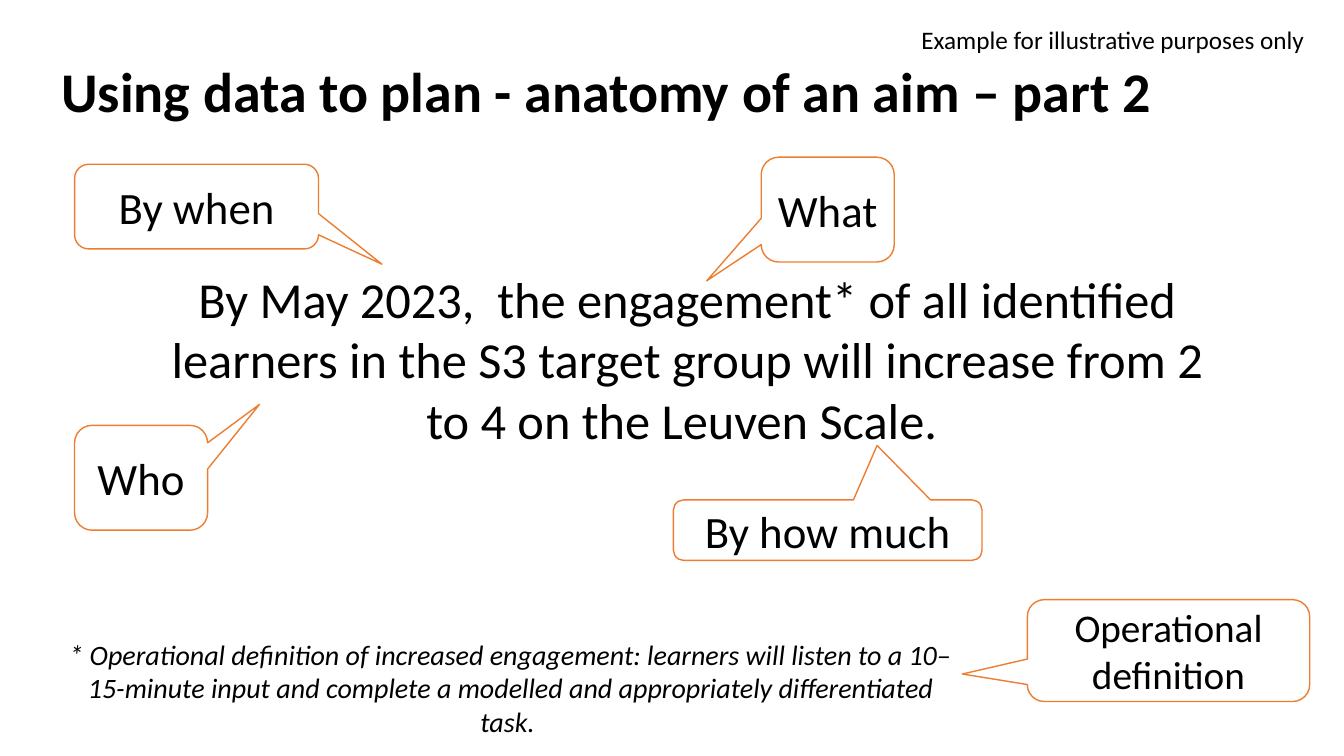
from pptx import Presentation
from pptx.dml.color import RGBColor
from pptx.enum.shapes import MSO_SHAPE
from pptx.enum.text import MSO_ANCHOR, PP_ALIGN
from pptx.util import Inches, Pt

CALLOUT = MSO_SHAPE.ROUNDED_RECTANGULAR_CALLOUT
TOP, MIDDLE = MSO_ANCHOR.TOP, MSO_ANCHOR.MIDDLE
LEFT, CENTER = PP_ALIGN.LEFT, PP_ALIGN.CENTER


def rgb(value):
    return RGBColor.from_string(value)


def write(tf, text, size, align=CENTER, anchor=TOP, bold=False, italic=False,
          wrap=True, spacing=None, font="Calibri", color="000000"):
    tf.word_wrap = wrap
    tf.vertical_anchor = anchor
    p = tf.paragraphs[0]
    p.alignment = align
    p.line_spacing = spacing
    r = p.add_run()
    r.text = text
    r.font.name = font
    r.font.size = Pt(size)
    r.font.bold = bold
    r.font.italic = italic
    r.font.color.rgb = rgb(color)


class AimSlide:
    """Draws on one slide, with boxes given as percent of its width and height."""

    fill = "FFFFFF"
    accent = "ED7D31"

    def __init__(self, prs):
        self.width, self.height = prs.slide_width, prs.slide_height
        self.s = prs.slides.add_slide(prs.slide_layouts[6])

    def place(self, x, y, w, h):
        return (round(self.width * x / 100), round(self.height * y / 100),
                round(self.width * w / 100), round(self.height * h / 100))

    def text(self, box, text, size, **style):
        sp = self.s.shapes.add_textbox(*self.place(*box))
        write(sp.text_frame, text, size, **style)

    def callout(self, box, tip, text, size=32):
        sp = self.s.shapes.add_shape(CALLOUT, *self.place(*box))
        sp.shadow.inherit = False
        sp.adjustments[0], sp.adjustments[1] = tip
        sp.fill.solid()
        sp.fill.fore_color.rgb = rgb(self.fill)
        sp.line.color.rgb = rgb(self.accent)
        sp.line.width = Pt(1)
        write(sp.text_frame, text, size, anchor=MIDDLE)


def main():
    prs = Presentation()
    prs.slide_width, prs.slide_height = Inches(13.33), Inches(7.5)
    slide = AimSlide(prs)

    slide.text((3.83, 83.6, 68.34, 14.8),
               "* Operational definition of increased engagement: learners will "
               "listen to a 10–15-minute input and complete a modelled and "
               "appropriately differentiated task. ", 20, italic=True)

    slide.callout((5.55, 21.73, 18.15, 11.2), (0.76, 0.68), "By when")
    slide.callout((5.55, 56.27, 9.9, 13.87), (0.89, -0.7), "Who")
    slide.callout((56.64, 20.8, 9.9, 13.87), (-0.91, 0.68), "What")
    slide.callout((50.11, 66.13, 22.96, 8), (0.16, -1.4), "By how much")
    slide.callout((76.44, 79.33, 21.01, 13.47), (-0.73, 0.23),
                  "Operational definition", size=28)

    slide.text((10.5, 34.8, 81.32, 25.4),
               "By May 2023,  the engagement* of all identified learners in the "
               "S3 target group will increase from 2 to 4 on the Leuven Scale. ", 36)
    slide.text((67.82, 2.53, 30.31, 5.33),
               "Example for illustrative purposes only", 18, align=LEFT, wrap=False)
    slide.text((3.83, 2.8, 86.27, 19.33),
               "Using data to plan - anatomy of an aim – part 2", 40,
               align=LEFT, anchor=MIDDLE, bold=True, spacing=0.9)

    prs.save("out.pptx")


if __name__ == "__main__":
    main()
